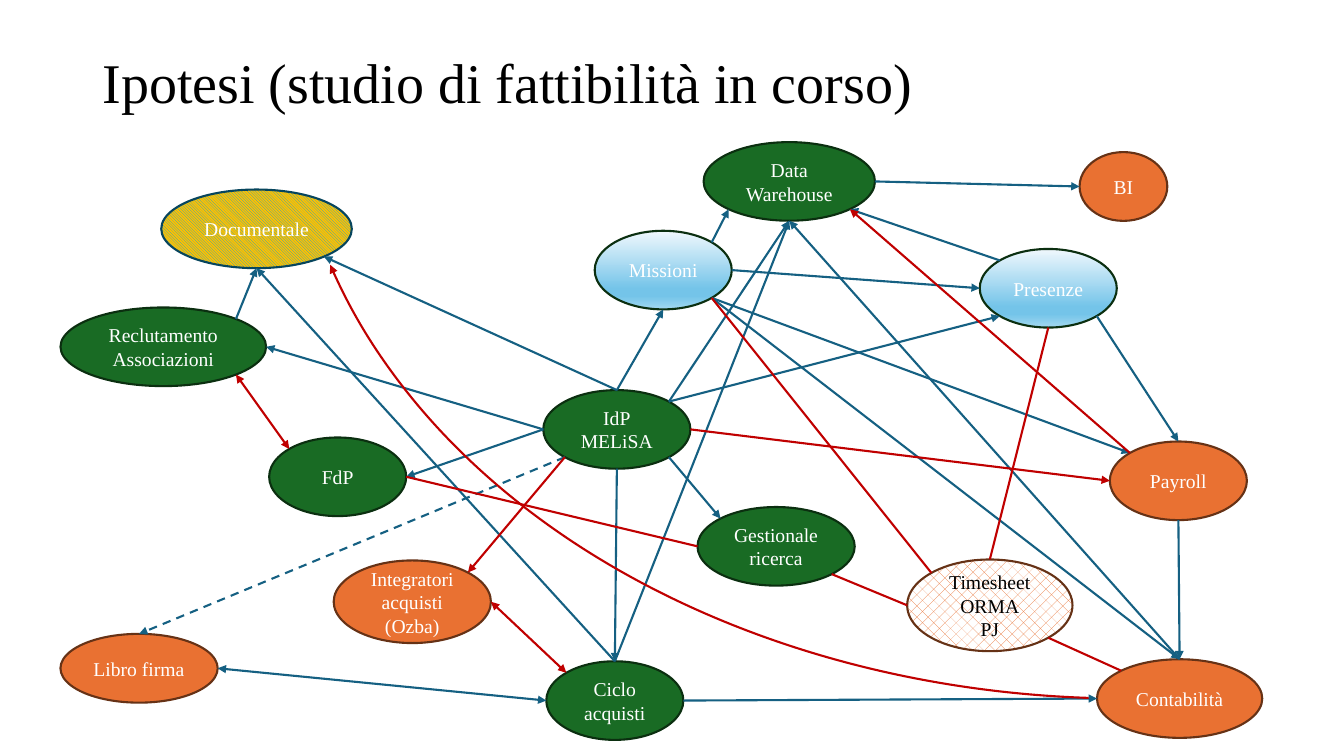
"""Draws the map of systems and data flows under study."""
import copy
import math

import lxml.etree
import pptx
import pptx.dml.color
import pptx.enum.dml
import pptx.enum.shapes
import pptx.enum.text
import pptx.oxml.ns
import pptx.util

WIDE, HIGH = 13.333, 7.5
FONT = "Times New Roman"
TITLE = "Ipotesi (studio di fattibilità in corso)"
BLUE, RED, WHITE, BLACK = "156082", "C00000", "FFFFFF", "000000"
PATTERN = pptx.enum.dml.MSO_PATTERN
ROW = 10.4

# kind: fill, outline, text
LOOKS = {
    "green": ("196B24", "0B2F10", WHITE),
    "orange": ("E97132", "663216", WHITE),
    "sky": ([(0, "F0F8FD"), (0.74, "74C4E9"), (0.83, "74C4E9"), (1, "A2D8F0")],
            "0B2F10", WHITE),
    "stripe": ((PATTERN.DARK_DOWNWARD_DIAGONAL, "0F9ED5", "FFC000"), "07455D", WHITE),
    "mesh": ((PATTERN.PERCENT_25, "E97132", WHITE), "663216", BLACK),
}

# key: text, look, centre x, centre y, width, height in percent of the slide
NODES = {
    "idp": ("IdP\nMELiSA", "green", 45.9, 56.8, 10.95, ROW),
    "bi": ("BI", "orange", 83.59, 24.67, 6.53, 9.1),
    "conta": ("Contabilità", "orange", 87.77, 92.4, 12.3, ROW),
    "trips": ("Missioni", "sky", 49.35, 35.73, 10.2, ROW),
    "hours": ("Presenze", "sky", 78, 38.13, 10.2, ROW),
    "pay": ("Payroll", "orange", 87.68, 63.6, 10.2, ROW),
    "buy": ("Integratori acquisti (Ozba)", "orange", 30.68, 79.6, 11.7, 10.93),
    "sign": ("Libro firma", "orange", 10.35, 88.4, 11.7, 9.1),
    "cycle": ("Ciclo acquisti", "green", 45.75, 92.67, 10.2, ROW),
    "fdp": ("FdP", "green", 25.13, 63.07, 10.2, ROW),
    "hire": ("Reclutamento\nAssociazioni", "green", 12.15, 45.87, 15.3, ROW),
    "data": ("Data Warehouse", "green", 58.73, 24, 12.75, ROW),
    "docs": ("Documentale", "stripe", 19.09, 30.27, 14.18, ROW),
    "grant": ("Gestionale ricerca", "green", 57.75, 72.27, 11.7, ROW),
    "time": ("Timesheet\nORMA\nPJ", "mesh", 73.65, 80.07, 12.3, 12.13),
}

SITES = ["n", "nw", "w", "sw", "s", "se", "e", "ne"]

# colour, arrow style: (from, site, to, site)
FLOWS = {
    (BLUE, "->"): [
        ("idp", "n", "trips", "s"), ("idp", "ne", "hours", "sw"),
        ("hours", "se", "pay", "n"), ("trips", "e", "hours", "w"),
        ("pay", "s", "conta", "n"), ("trips", "se", "pay", "nw"),
        ("trips", "se", "conta", "n"), ("idp", "s", "cycle", "n"),
        ("cycle", "e", "conta", "w"), ("idp", "w", "hire", "e"),
        ("idp", "w", "fdp", "e"), ("cycle", "n", "data", "s"),
        ("idp", "se", "grant", "nw"), ("idp", "ne", "data", "s"),
        ("trips", "ne", "data", "sw"), ("hours", "nw", "data", "se"),
        ("conta", "n", "data", "s"), ("data", "e", "bi", "w"),
        ("idp", "n", "docs", "se"), ("hire", "ne", "docs", "s"),
        ("cycle", "n", "docs", "s"),
    ],
    (BLUE, "-->"): [("idp", "sw", "sign", "n")],
    (BLUE, "<->"): [("cycle", "w", "sign", "e")],
    (RED, "->"): [
        ("idp", "e", "pay", "w"), ("pay", "nw", "data", "se"),
        ("idp", "sw", "buy", "ne"),
    ],
    (RED, "<->"): [("hire", "se", "fdp", "nw"), ("cycle", "nw", "buy", "e")],
    (RED, "-"): [
        ("time", "se", "conta", "nw"), ("grant", "se", "time", "w"),
        ("fdp", "e", "grant", "w"), ("trips", "se", "time", "nw"),
        ("hours", "s", "time", "n"),
    ],
}
ARC = (83.74, 9.4, 93.38, 221.2)
SWEEP = (170.22, 213.98)


def rgb(code):
    """Turn a hex string into a colour."""
    return pptx.dml.color.RGBColor.from_string(code)


def place(x, y, w, h):
    """Turn a centred box in percent into left, top, width, height."""
    shares = ((x - w / 2, WIDE), (y - h / 2, HIGH), (w, WIDE), (h, HIGH))
    return [pptx.util.Inches(part * full / 100) for part, full in shares]


def write(shape, text, size, code, align):
    """Set and format the text of a shape."""
    frame = shape.text_frame
    frame.word_wrap = True
    frame.vertical_anchor = pptx.enum.text.MSO_ANCHOR.MIDDLE
    frame.text = text
    for para in frame.paragraphs:
        para.alignment = align
        for run in para.runs:
            run.font.name = FONT
            run.font.size = pptx.util.Pt(size)
            run.font.color.rgb = rgb(code)


def paint(shape, look):
    """Fill a shape with a plain colour, a pattern or a gradient."""
    fill = shape.fill
    if isinstance(look, str):
        fill.solid()
        fill.fore_color.rgb = rgb(look)
    elif isinstance(look, tuple):
        fill.patterned()
        fill.pattern = look[0]
        fill.fore_color.rgb, fill.back_color.rgb = rgb(look[1]), rgb(look[2])
    else:
        fill.gradient()
        fill.gradient_angle = 270
        stops = shape._element.spPr.find(".//" + pptx.oxml.ns.qn("a:gsLst"))
        for _ in look[len(stops):]:
            stops.append(copy.deepcopy(stops[0]))
        for stop, (spot, code) in zip(fill.gradient_stops, look):
            stop.color.rgb = rgb(code)
            stop.position = spot


def stroke(shape, code, style="-"):
    """Set the line colour, dash and arrowheads."""
    shape.line.color.rgb = rgb(code)
    shape.line.width = pptx.util.Pt(1.5)
    if style.startswith("--"):
        shape.line.dash_style = pptx.enum.dml.MSO_LINE.DASH
    edge = shape._element.spPr.find(pptx.oxml.ns.qn("a:ln"))
    for mark, tag in (("<", "a:headEnd"), (">", "a:tailEnd")):
        if mark in style:
            lxml.etree.SubElement(edge, pptx.oxml.ns.qn(tag), type="triangle")


def point(shape, site):
    """Find a connection site on the rim of an ellipse."""
    turn = math.pi / 2 + SITES.index(site) * math.pi / 4
    x = shape.left + shape.width * (1 + math.cos(turn)) / 2
    y = shape.top + shape.height * (1 - math.sin(turn)) / 2
    return round(x), round(y)


def link(shapes, start, end, code, style):
    """Join the sites of two ellipses with a glued connector."""
    kind = pptx.enum.shapes.MSO_CONNECTOR.STRAIGHT
    ends = [(start, "a:stCxn"), (end, "a:endCxn")]
    spots = [point(shape, site) for (shape, site), _ in ends]
    line = shapes.add_connector(kind, *spots[0], *spots[1])
    stroke(line, code, style)
    lxml.etree.SubElement(line._element.spPr, pptx.oxml.ns.qn("a:effectLst"))
    glue = line._element.nvCxnSpPr.cNvCxnSpPr
    for (shape, site), tag in ends:
        lxml.etree.SubElement(glue, pptx.oxml.ns.qn(tag), id=str(shape.shape_id),
                              idx=str(SITES.index(site)))


def main():
    """Build and save the slide."""
    deck = pptx.Presentation()
    deck.slide_width, deck.slide_height = map(pptx.util.Inches, (WIDE, HIGH))
    shapes = deck.slides.add_slide(deck.slide_layouts[6]).shapes
    forms, align = pptx.enum.shapes.MSO_SHAPE, pptx.enum.text.PP_ALIGN

    title = shapes.add_textbox(*place(50.03, 11.33, 86.25, 12))
    write(title, TITLE, 40, BLACK, align.LEFT)
    title.text_frame.paragraphs[0].line_spacing = 0.9

    nodes = {}
    for key, (text, look, *box) in NODES.items():
        node = nodes[key] = shapes.add_shape(forms.OVAL, *place(*box))
        fill, edge, ink = LOOKS[look]
        node.shadow.inherit = False
        paint(node, fill)
        stroke(node, edge)
        write(node, text, 14, ink, align.CENTER)

    for (code, style), pairs in FLOWS.items():
        for tail, out, head, into in pairs:
            link(shapes, (nodes[tail], out), (nodes[head], into), code, style)

    arc = shapes.add_shape(forms.ARC, *place(*ARC))
    arc.adjustments[0], arc.adjustments[1] = SWEEP
    arc.rotation = 270
    arc._element.spPr.xfrm.set("flipH", "1")
    arc.shadow.inherit = False
    arc.fill.background()
    stroke(arc, RED, "<-")
    deck.save("out.pptx")


if __name__ == "__main__":
    main()
